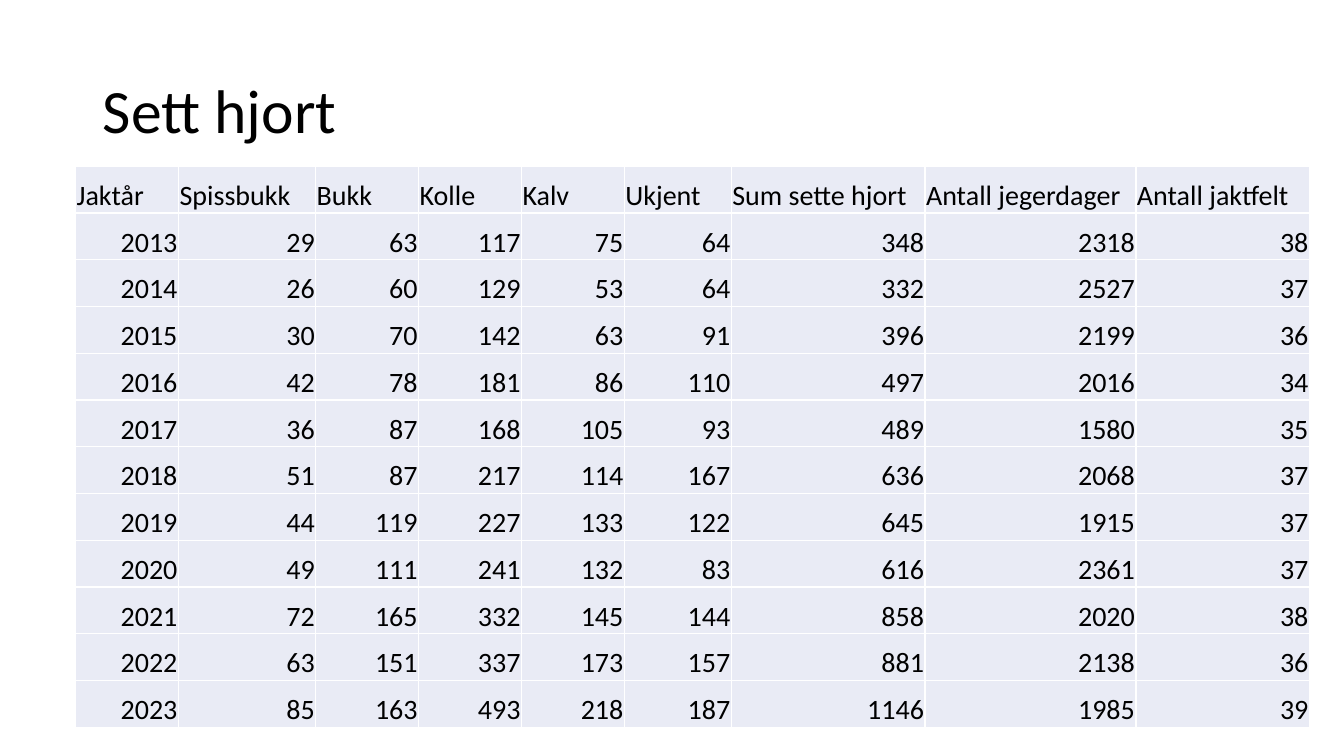
from dataclasses import dataclass

from lxml import etree
from pptx import Presentation
from pptx.dml.color import RGBColor
from pptx.enum.text import MSO_ANCHOR, PP_ALIGN
from pptx.oxml.ns import qn
from pptx.util import Inches, Pt

LEFT, RIGHT = PP_ALIGN.LEFT, PP_ALIGN.RIGHT
MIDDLE, BOTTOM = MSO_ANCHOR.MIDDLE, MSO_ANCHOR.BOTTOM
TITLE_ONLY = 5


@dataclass(frozen=True)
class Theme:
    font: str = "Calibri"
    text: str = "000000"
    cell: str = "E9EBF5"
    border: str = "FFFFFF"
    title_size: int = 44
    table_size: int = 20
    border_width: int = 1


THEME = Theme()
HEADERS = ["Jaktår", "Spissbukk", "Bukk", "Kolle", "Kalv", "Ukjent",
           "Sum sette hjort", "Antall jegerdager", "Antall jaktfelt"]
COLUMN_WIDTHS = [1.02, 1.36, 1.02, 1.02, 1.02, 1.06, 1.92, 2.09, 1.72]
SIGHTINGS = [
    [2013, 29, 63, 117, 75, 64, 348, 2318, 38],
    [2014, 26, 60, 129, 53, 64, 332, 2527, 37],
    [2015, 30, 70, 142, 63, 91, 396, 2199, 36],
    [2016, 42, 78, 181, 86, 110, 497, 2016, 34],
    [2017, 36, 87, 168, 105, 93, 489, 1580, 35],
    [2018, 51, 87, 217, 114, 167, 636, 2068, 37],
    [2019, 44, 119, 227, 133, 122, 645, 1915, 37],
    [2020, 49, 111, 241, 132, 83, 616, 2361, 37],
    [2021, 72, 165, 332, 145, 144, 858, 2020, 38],
    [2022, 63, 151, 337, 173, 157, 881, 2138, 36],
    [2023, 85, 163, 493, 218, 187, 1146, 1985, 39],
]


def write_text(text_frame, text, *, size, align=LEFT, line_spacing=None):
    paragraph = text_frame.paragraphs[0]
    paragraph.alignment = align
    paragraph.line_spacing = line_spacing
    run = paragraph.add_run()
    run.text = text
    run.font.name = THEME.font
    run.font.size = Pt(size)
    run.font.color.rgb = RGBColor.from_string(THEME.text)


def add_borders(cell):
    properties = cell._tc.get_or_add_tcPr()
    for side in ("a:lnL", "a:lnR", "a:lnT", "a:lnB"):
        line = etree.SubElement(properties, qn(side), w=str(Pt(THEME.border_width)))
        fill = etree.SubElement(line, qn("a:solidFill"))
        etree.SubElement(fill, qn("a:srgbClr"), val=THEME.border)


def format_cell(cell):
    cell.vertical_anchor = BOTTOM
    cell.margin_left = cell.margin_right = cell.margin_top = Inches(0.01)
    cell.margin_bottom = 0
    add_borders(cell)
    cell.fill.solid()
    cell.fill.fore_color.rgb = RGBColor.from_string(THEME.cell)


def place_title(slide, text, left, top, width, height):
    title = slide.shapes.title
    title.left, title.top = Inches(left), Inches(top)
    title.width, title.height = Inches(width), Inches(height)
    title.text_frame.vertical_anchor = MIDDLE
    write_text(title.text_frame, text, size=THEME.title_size, line_spacing=0.9)


def place_table(slide, left, top, width, height):
    rows = [HEADERS, *SIGHTINGS]
    table = slide.shapes.add_table(
        len(rows), len(HEADERS),
        Inches(left), Inches(top), Inches(width), Inches(height)).table
    table.first_row = False
    table.horz_banding = False
    for column, share in zip(table.columns, COLUMN_WIDTHS):
        column.width = Inches(width * share / sum(COLUMN_WIDTHS))
    for row_index, values in enumerate(rows):
        table.rows[row_index].height = Inches(height / len(rows))
        for column_index, value in enumerate(values):
            cell = table.cell(row_index, column_index)
            format_cell(cell)
            write_text(cell.text_frame, str(value), size=THEME.table_size,
                       align=RIGHT if row_index else LEFT)


def main():
    presentation = Presentation()
    presentation.slide_width = Inches(13.33)
    presentation.slide_height = Inches(7.5)
    slide = presentation.slides.add_slide(presentation.slide_layouts[TITLE_ONLY])
    place_title(slide, "Sett hjort", 0.92, 0.4, 11.5, 1.45)
    place_table(slide, 0.75, 1.65, 12.24, 5.57)
    presentation.save("out.pptx")


if __name__ == "__main__":
    main()
